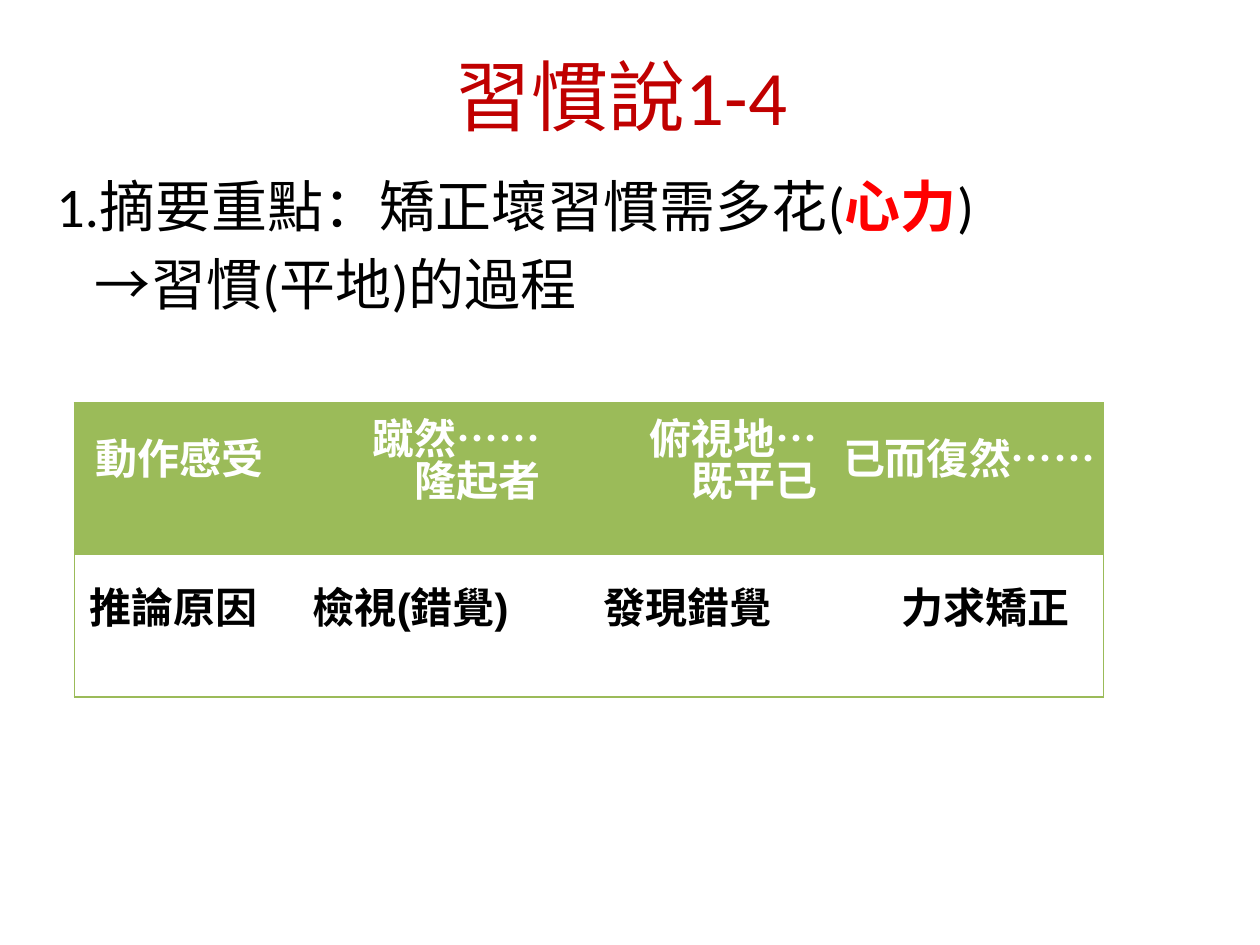
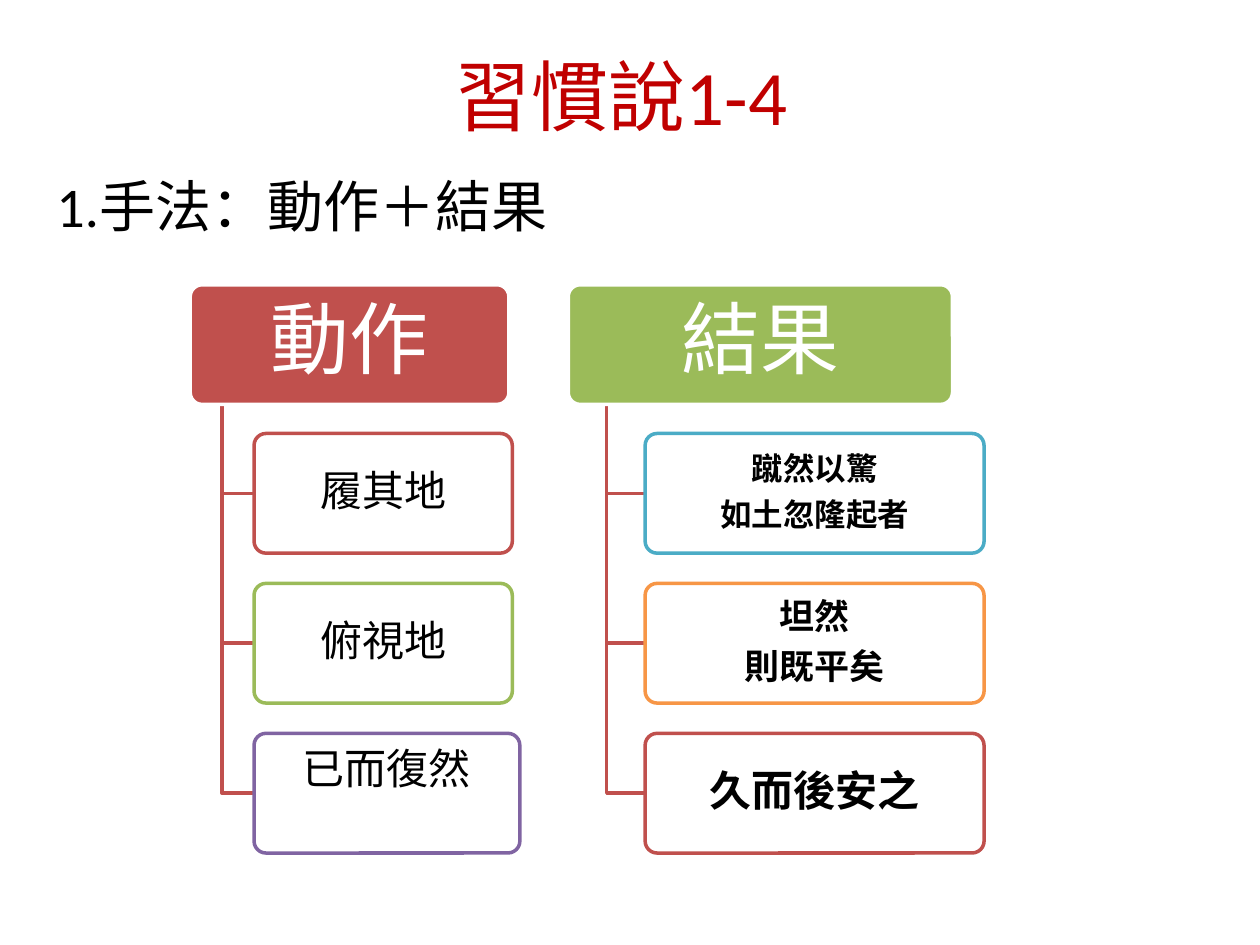
from lxml.etree import SubElement
from pptx import Presentation
from pptx.dml.color import RGBColor
from pptx.enum.shapes import MSO_SHAPE
from pptx.enum.text import MSO_ANCHOR, PP_ALIGN
from pptx.oxml.ns import qn
from pptx.util import Inches, Pt

LATIN, CJK = "Calibri", "Noto Sans CJK SC"
TITLE_RED, KEY_RED = "C00000", "FF0000"
RED, GREEN, PURPLE, TEAL, ORANGE = "C0504D", "9BBB59", "8064A2", "4BACC6", "F79646"
BLACK, WHITE = "000000", "FFFFFF"


def rgb(value):
    return RGBColor.from_string(value)


def style(paragraph, size, color=BLACK, bold=False, align=PP_ALIGN.CENTER, name=LATIN):
    paragraph.alignment = align
    font = paragraph.font
    font.name, font.size, font.bold = name, Pt(size), bold
    font.color.rgb = rgb(color)


prs = Presentation()
prs.slide_width, prs.slide_height = Inches(10), Inches(7.5)

# Heading and opening lines of both slides: indent, then runs of text, font, colour
openings = [
    [
        (0, [("1.摘要重點", LATIN, BLACK), ("：", CJK, BLACK),
             ("矯正壞習慣需多花(", LATIN, BLACK), ("心力", LATIN, KEY_RED),
             (")", LATIN, BLACK)]),
        (0.3, [("→習慣(平地)的過程", LATIN, BLACK)]),
    ],
    [(0, [("1.手法", LATIN, BLACK), ("：動作＋結果", CJK, BLACK)])],
]
for opening in openings:
    slide = prs.slides.add_slide(prs.slide_layouts[6])
    heading = slide.shapes.add_textbox(
        Inches(0.43), Inches(0.13), Inches(9), Inches(1.25)).text_frame
    heading.word_wrap = True
    heading.vertical_anchor = MSO_ANCHOR.MIDDLE
    heading.text = "習慣說1-4"
    style(heading.paragraphs[0], 44, TITLE_RED)

    body = slide.shapes.add_textbox(
        Inches(0.35), Inches(1.31), Inches(9), Inches(4.95)).text_frame
    body.word_wrap = True
    for i, (indent, runs) in enumerate(opening):
        line = body.paragraphs[0] if i == 0 else body.add_paragraph()
        line.space_before = Pt(6.4)
        style(line, 32, align=PP_ALIGN.LEFT)
        line._p.get_or_add_pPr().set("marL", str(Inches(indent)))
        for text, font_name, color in runs:
            run = line.add_run()
            run.text = text
            run.font.name, run.font.size = font_name, Pt(32)
            run.font.bold = color == KEY_RED
            run.font.color.rgb = rgb(color)

summary_slide, method_slide = prs.slides

# Slide 1: actions and the reasoning behind them
reasoning = [
    ["動作感受", "蹴然……\n隆起者", "俯視地…\n既平已", "已而復然……"],
    ["推論原因", "檢視(錯覺)", "發現錯覺", "力求矯正"],
]
table = summary_slide.shapes.add_table(
    2, 4, Inches(0.59), Inches(3.2), Inches(8.18), Inches(2.35)).table
table.first_row = table.horz_banding = False
NO_STYLE = "{2D5ABB26-0587-4C30-8999-92F81FD0307C}"
table._tbl.tblPr.find(qn("a:tableStyleId")).text = NO_STYLE
for column, width in zip(table.columns, [1.57, 2.2, 2.2, 2.2]):
    column.width = Inches(width)
for row, height in zip(table.rows, [1.18, 1.15]):
    row.height = Inches(height)

for r, row_texts in enumerate(reasoning):
    is_header = r == 0
    for c, text in enumerate(row_texts):
        cell = table.cell(r, c)
        cell.text = text
        cell.vertical_anchor = MSO_ANCHOR.TOP
        cell.margin_left = Inches(0.4 if text == "力求矯正" else 0.07)
        cell.margin_right = Inches(0.07)
        cell.margin_top = Inches(0.17 if "\n" in text else 0.33)
        cell.margin_bottom = 0
        for paragraph in cell.text_frame.paragraphs:
            style(paragraph, 24, WHITE if is_header else BLACK, True,
                  PP_ALIGN.RIGHT if is_header else PP_ALIGN.CENTER, "Arial")
            paragraph.line_spacing = Pt(24)

        borders = {"a:lnL": 1 if c == 0 else 0, "a:lnR": 1 if c == 3 else 0,
                   "a:lnT": 1 if is_header else 4, "a:lnB": 1}
        for side, points in borders.items():
            if points:
                edge = SubElement(cell._tc.get_or_add_tcPr(), qn(side), w=str(Pt(points)))
                SubElement(SubElement(edge, qn("a:solidFill")), qn("a:srgbClr"), val=GREEN)
        cell.fill.solid()
        cell.fill.fore_color.rgb = rgb(GREEN if is_header else WHITE)

# Slide 2: two trees, each a head with three branches
BOX_HEIGHT, HEAD_TOP, FIRST_TOP, STEP = 0.95, 2.26, 3.44, 1.19
# Branch: text, outline, width, size, bold, bottom inset
trees = [
    ("動作", RED, 1.51, 2.53, [
        ("履其地", RED, 2.05, 24, False, 0.03),
        ("俯視地", GREEN, 2.05, 24, False, 0.03),
        ("已而復然", PURPLE, 2.11, 24, False, 0.38),
    ]),
    ("結果", GREEN, 4.51, 3.05, [
        ("蹴然以驚\n如土忽隆起者", TEAL, 2.69, 18, True, 0.03),
        ("坦然\n則既平矣", ORANGE, 2.69, 20, True, 0.03),
        ("久而後安之", RED, 2.69, 24, True, 0.03),
    ]),
]
for head, head_color, left, head_width, branches in trees:
    trunk_x, branch_x = left + 0.1 * head_width, left + 0.2 * head_width
    boxes = [(head, left, HEAD_TOP, head_width, head_color, WHITE, WHITE, 45, False, 0.06)]
    for i, (text, outline, width, size, bold, inset) in enumerate(branches):
        top = FIRST_TOP + i * STEP
        boxes.append((text, branch_x, top, width, WHITE, outline, BLACK, size, bold, inset))
        middle = top + BOX_HEIGHT / 2
        builder = method_slide.shapes.build_freeform(Inches(trunk_x), Inches(HEAD_TOP + BOX_HEIGHT))
        builder.add_line_segments(
            [(Inches(trunk_x), Inches(middle)), (Inches(branch_x), Inches(middle))], close=False)
        elbow = builder.convert_to_shape()
        elbow.shadow.inherit = False
        elbow.fill.background()
        elbow.line.color.rgb = rgb(RED)
        elbow.line.width = Pt(2)

    for text, x, top, width, fill, outline, ink, size, bold, inset in boxes:
        box = method_slide.shapes.add_shape(
            MSO_SHAPE.ROUNDED_RECTANGLE, Inches(x), Inches(top), Inches(width), Inches(BOX_HEIGHT))
        box.adjustments[0] = 0.1
        box.shadow.inherit = False
        box.fill.solid()
        box.fill.fore_color.rgb = rgb(fill)
        box.line.color.rgb = rgb(outline)
        box.line.width = Pt(2)
        frame = box.text_frame
        frame.word_wrap = True
        frame.vertical_anchor = MSO_ANCHOR.MIDDLE
        frame.margin_left = frame.margin_right = Inches(0.05)
        frame.margin_top, frame.margin_bottom = Inches(0.03), Inches(inset)
        frame.text = text
        for paragraph in frame.paragraphs:
            style(paragraph, size, ink, bold)
            paragraph.line_spacing = 0.9
            paragraph.space_after = Pt(0.35 * size)

prs.save("out.pptx")
